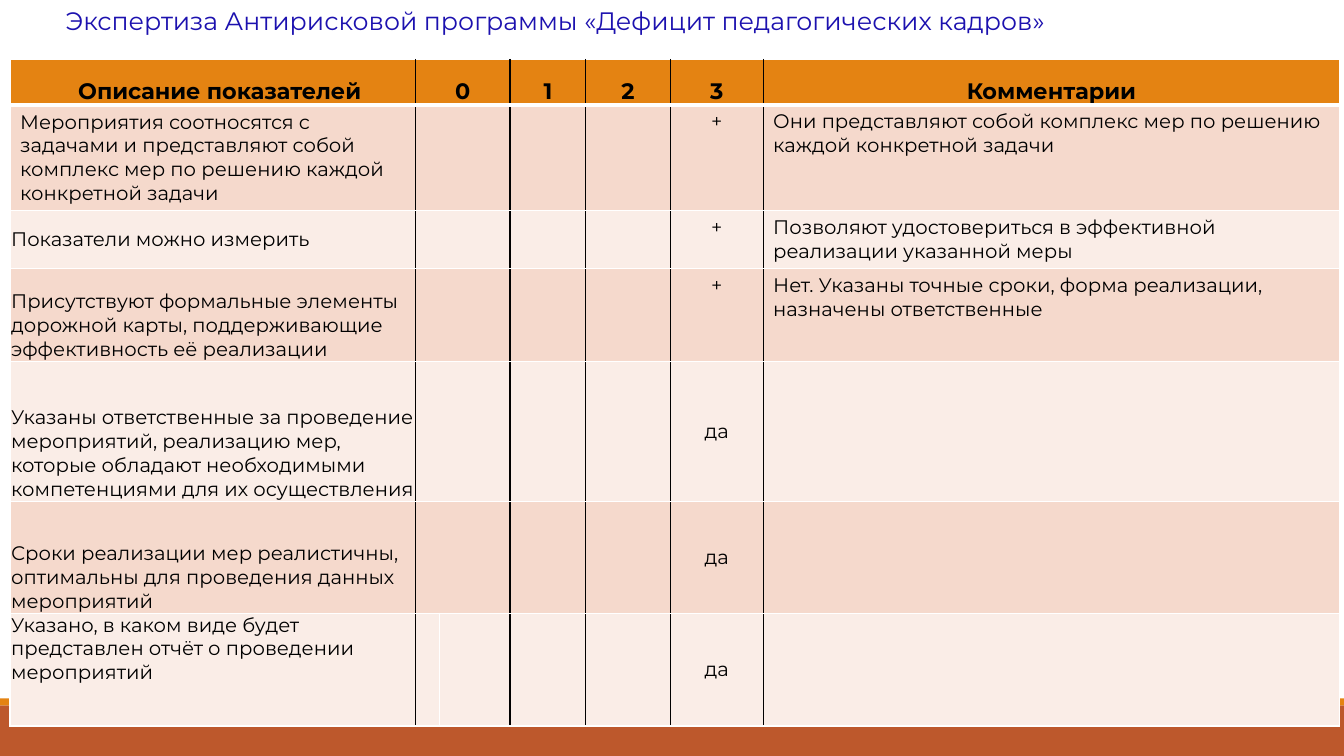
from lxml import etree
from pptx import Presentation
from pptx.dml.color import RGBColor
from pptx.enum.shapes import MSO_SHAPE
from pptx.enum.text import MSO_ANCHOR, MSO_AUTO_SIZE, PP_ALIGN
from pptx.oxml.ns import qn
from pptx.util import Inches, Pt

RECTANGLE = MSO_SHAPE.RECTANGLE
TOP, MIDDLE, BOTTOM = MSO_ANCHOR.TOP, MSO_ANCHOR.MIDDLE, MSO_ANCHOR.BOTTOM
LEFT, CENTER = PP_ALIGN.LEFT, PP_ALIGN.CENTER
NO_AUTOFIT = MSO_AUTO_SIZE.NONE

BLACK = RGBColor(0x00, 0x00, 0x00)
WHITE = RGBColor(0xFF, 0xFF, 0xFF)
INDIGO = RGBColor(0x1C, 0x11, 0xAF)
ORANGE = RGBColor(0xE4, 0x83, 0x12)
RUST = RGBColor(0xBD, 0x58, 0x2C)
PEACH = RGBColor(0xF5, 0xD9, 0xCC)
PALE = RGBColor(0xFA, 0xED, 0xE7)

FONT = "Montserrat"
SLIDE_WIDTH, SLIDE_HEIGHT = 13.33, 7.5
COLUMNS = [4.02, 0.13, 0.7, 0.75, 0.84, 0.92, 5.72]
ROWS = [0.45, 1.05, 0.56, 0.92, 1.39, 1.11, 1.12]
LABEL, SCORE_0, SCORE_0_REST, SCORE_1, SCORE_2, SCORE_3, COMMENT = range(7)
LAST_ROW = len(ROWS) - 1

TITLE = "Экспертиза Антирисковой программы «Дефицит педагогических кадров»"
HEADINGS = {LABEL: "Описание показателей", SCORE_0: "0", SCORE_1: "1",
            SCORE_2: "2", SCORE_3: "3", COMMENT: "Комментарии"}
INDICATORS = [
    ("Мероприятия соотносятся с задачами и представляют собой комплекс мер "
     "по решению каждой конкретной задачи", MIDDLE, "+",
     "Они представляют собой комплекс мер по решению каждой конкретной задачи"),
    ("Показатели можно измерить", MIDDLE, "+",
     "Позволяют удостовериться в эффективной реализации указанной меры"),
    ("Присутствуют формальные элементы дорожной карты, поддерживающие "
     "эффективность её реализации", BOTTOM, "+",
     "Нет. Указаны точные сроки, форма реализации, назначены ответственные"),
    ("Указаны ответственные за проведение мероприятий, реализацию мер, которые "
     "обладают необходимыми компетенциями для их осуществления", BOTTOM, "да", ""),
    ("Сроки реализации мер реалистичны, оптимальны для проведения данных "
     "мероприятий", BOTTOM, "да", ""),
    ("Указано, в каком виде будет представлен отчёт о проведении мероприятий",
     TOP, "да", ""),
]


def write(frame, text, size=14, color=BLACK, bold=False, align=LEFT):
    paragraph = frame.paragraphs[0]
    paragraph.alignment = align
    run = paragraph.add_run()
    run.text = text
    run.font.name = FONT
    run.font.size = Pt(size)
    run.font.bold = bold
    run.font.color.rgb = color


def fill_cell(cell, text, anchor=TOP, inset=None, **text_format):
    cell.vertical_anchor = anchor
    if inset is not None:
        cell.margin_left = Inches(inset)
        cell.margin_right = cell.margin_top = cell.margin_bottom = 0
    write(cell.text_frame, text, **text_format)


def add_borders(cell, left, right, bottom_width):
    properties = cell._tc.get_or_add_tcPr()
    edges = [("lnL", left, 1), ("lnR", right, 1),
             ("lnT", WHITE, 1), ("lnB", WHITE, bottom_width)]
    for position, (tag, color, width) in enumerate(edges):
        line = etree.Element(qn("a:" + tag), w=str(Pt(width)))
        solid = etree.SubElement(line, qn("a:solidFill"))
        etree.SubElement(solid, qn("a:srgbClr"), val=str(color))
        properties.insert(position, line)


def edge_color(row, edge):
    split_edge = row == LAST_ROW and edge == SCORE_0_REST
    return WHITE if edge in (0, len(COLUMNS)) or split_edge else BLACK


def add_footer_bars(slide, top, height):
    stripe = height * 0.12
    for color, y, depth in ((RUST, top + stripe, height - stripe),
                            (ORANGE, top, stripe)):
        bar = slide.shapes.add_shape(RECTANGLE, 0, Inches(y),
                                     Inches(SLIDE_WIDTH), Inches(depth))
        bar.shadow.inherit = False
        bar.fill.solid()
        bar.fill.fore_color.rgb = color
        bar.line.fill.background()


def add_title(slide, left, top, width, height):
    title = slide.shapes.title
    title.left, title.top = Inches(left), Inches(top)
    title.width, title.height = Inches(width), Inches(height)
    frame = title.text_frame
    frame.word_wrap = True
    frame.auto_size = NO_AUTOFIT
    frame.vertical_anchor = TOP
    write(frame, TITLE, size=18, color=INDIGO)


def style_grid(grid):
    for row in range(len(ROWS)):
        shade = ORANGE if row == 0 else (PEACH if row % 2 else PALE)
        for column in range(len(COLUMNS)):
            cell = grid.cell(row, column)
            cell.fill.solid()
            cell.fill.fore_color.rgb = shade
            add_borders(cell, edge_color(row, column), edge_color(row, column + 1),
                        3 if row == 0 else 1)
        if row != LAST_ROW:
            grid.cell(row, SCORE_0).merge(grid.cell(row, SCORE_0_REST))


def add_review_table(slide, left, top):
    grid = slide.shapes.add_table(len(ROWS), len(COLUMNS), Inches(left), Inches(top),
                                  Inches(sum(COLUMNS)), Inches(sum(ROWS))).table
    grid.horz_banding = False
    for column, width in zip(grid.columns, COLUMNS):
        column.width = Inches(width)
    for row, height in zip(grid.rows, ROWS):
        row.height = Inches(height)
    style_grid(grid)

    for column, heading in HEADINGS.items():
        fill_cell(grid.cell(0, column), heading, BOTTOM,
                  0.14 if column == LABEL else 0, size=16, bold=True, align=CENTER)
    for row, (label, anchor, score, comment) in enumerate(INDICATORS, 1):
        fill_cell(grid.cell(row, LABEL), label, anchor, None if row == 1 else 0.01)
        if score == "+":
            fill_cell(grid.cell(row, SCORE_3), score, align=CENTER)
        else:
            fill_cell(grid.cell(row, SCORE_3), score, MIDDLE, 0, align=CENTER)
        if comment:
            fill_cell(grid.cell(row, COMMENT), comment)


def main():
    deck = Presentation()
    deck.slide_width, deck.slide_height = Inches(SLIDE_WIDTH), Inches(SLIDE_HEIGHT)
    slide = deck.slides.add_slide(deck.slide_layouts.get_by_name("Title Only"))
    add_footer_bars(slide, SLIDE_HEIGHT - 0.57, 0.57)
    add_review_table(slide, 0.1, 0.59)
    add_title(slide, 0.55, 0, 10.97, 0.4)
    deck.save("out.pptx")


if __name__ == "__main__":
    main()
